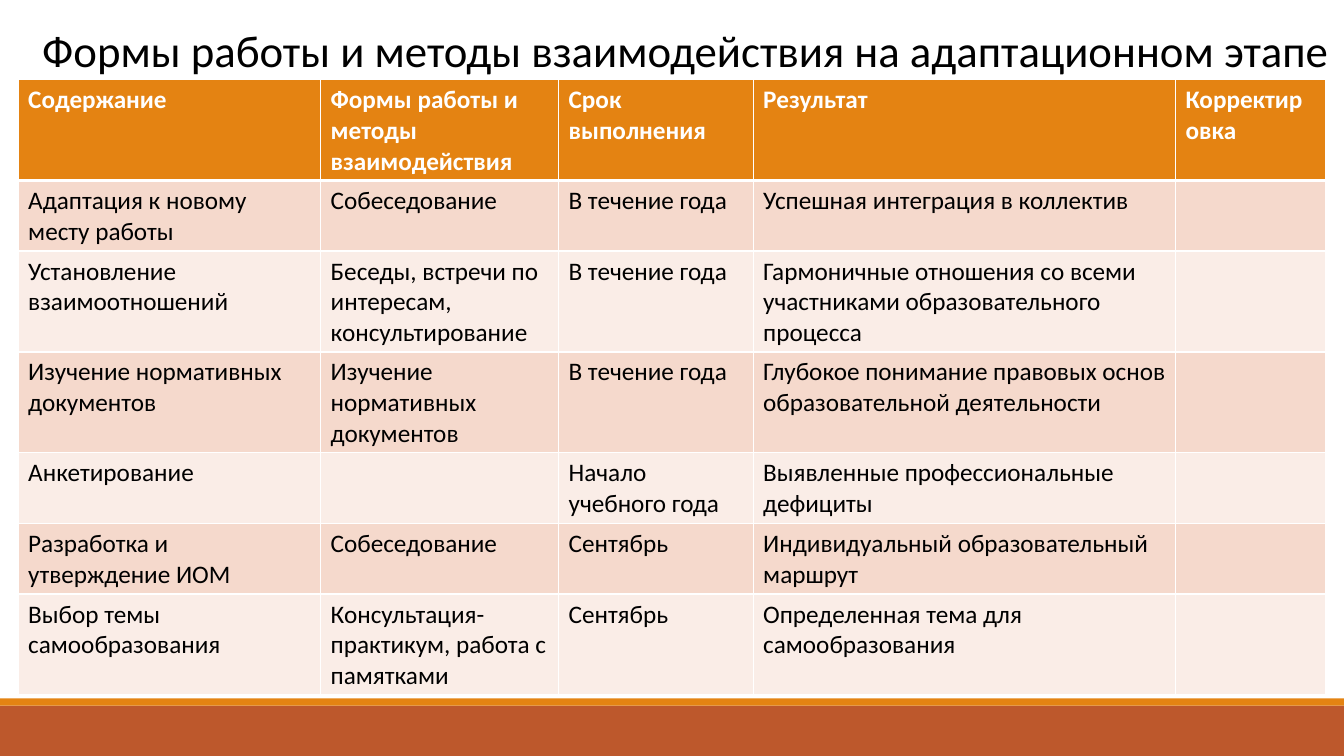
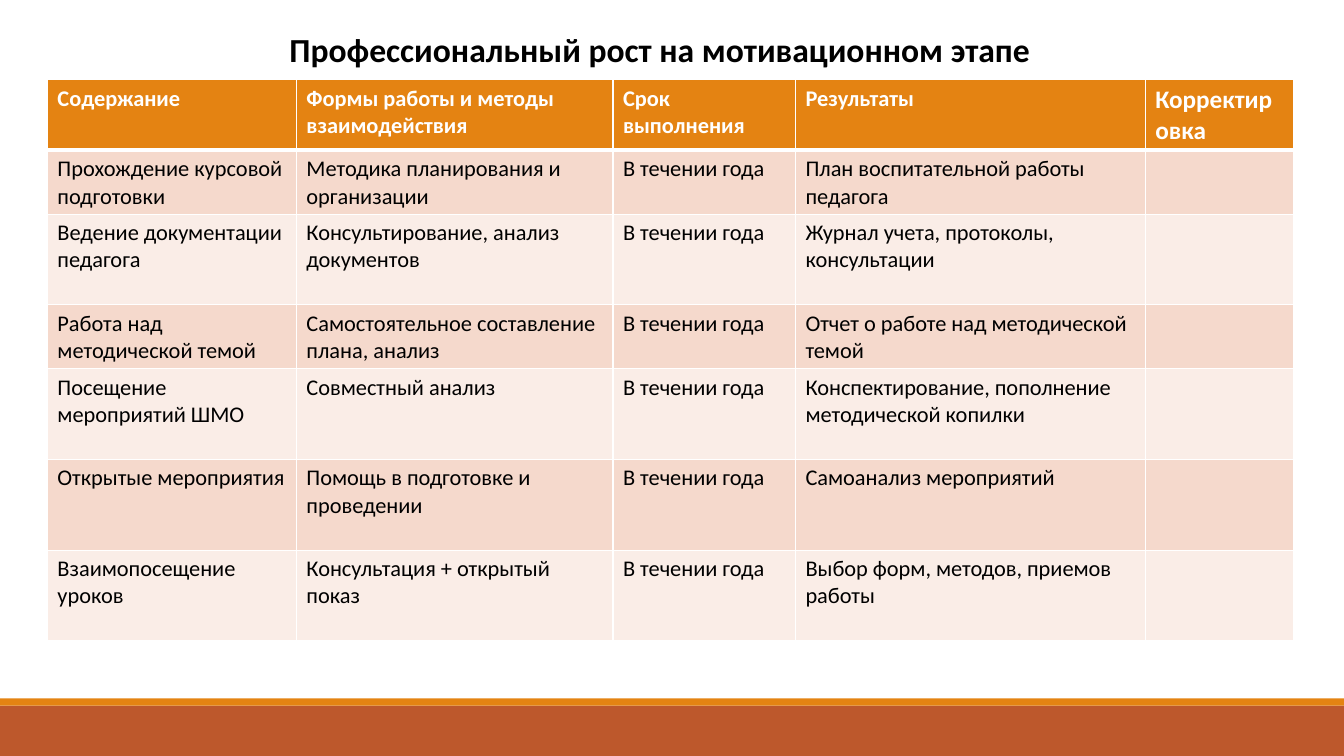
from pptx import Presentation
from pptx.dml.color import RGBColor
from pptx.enum.shapes import MSO_SHAPE as Shape
from pptx.enum.text import PP_ALIGN as Align
from pptx.oxml import parse_xml
from pptx.oxml.ns import nsdecls
from pptx.util import Inches, Pt

FONT = "Calibri"
WHITE = RGBColor(0xFF, 0xFF, 0xFF)
BLACK = RGBColor(0x00, 0x00, 0x00)
ORANGE = RGBColor(0xE4, 0x83, 0x12)
RUST = RGBColor(0xBD, 0x58, 0x2C)
ROW_FILLS = [RGBColor(0xF5, 0xD9, 0xCC), RGBColor(0xFA, 0xED, 0xE7)]
TABLE_TOP = 0.79
BANDS = [(7, 0.5, RUST), (6.93, 0.07, ORANGE)]  # top, height, fill

SLIDES = [
    {
        "title": "Формы работы и методы взаимодействия на адаптационном этапе",
        "title_box": (0.32, 0.18, 13.01, 0.64),
        "title_style": (32, False, Align.LEFT),
        "left": 0.18,
        "columns": [3, 2.36, 1.93, 4.19, 1.49],
        "heights": [1, 0.7, 1, 1, 0.7, 0.7, 1],
        "size": 18,
        "rows": [
            ("Содержание", "Формы работы и методы взаимодействия",
             "Срок выполнения", "Результат", "Корректировка"),
            ("Адаптация к новому месту работы", "Собеседование",
             "В течение года", "Успешная интеграция в коллектив", ""),
            ("Установление взаимоотношений",
             "Беседы, встречи по интересам, консультирование", "В течение года",
             "Гармоничные отношения со всеми участниками образовательного процесса", ""),
            ("Изучение нормативных документов", "Изучение нормативных документов",
             "В течение года",
             "Глубокое понимание правовых основ образовательной деятельности", ""),
            ("Анкетирование", "", "Начало учебного года",
             "Выявленные профессиональные дефициты", ""),
            ("Разработка и утверждение ИОМ", "Собеседование", "Сентябрь",
             "Индивидуальный образовательный маршрут", ""),
            ("Выбор темы самообразования",
             "Консультация-практикум, работа с памятками", "Сентябрь",
             "Определенная тема для самообразования", ""),
        ],
    },
    {
        "title": "Профессиональный рост на мотивационном этапе",
        "title_box": (2.18, 0.24, 8.73, 0.5),
        "title_style": (24, True, Align.CENTER),
        "left": 0.47,
        "columns": [2.47, 3.14, 1.81, 3.47, 1.47],
        "heights": [0.7, 0.63, 0.9, 0.63, 0.9, 0.9, 0.9],
        "size": 16,
        "rows": [
            ("Содержание", "Формы работы и методы взаимодействия",
             "Срок выполнения", "Результаты", "Корректировка"),
            ("Прохождение курсовой подготовки", "Методика планирования и организации",
             "В течении года", "План воспитательной работы педагога", ""),
            ("Ведение документации педагога", "Консультирование, анализ документов",
             "В течении года", "Журнал учета, протоколы, консультации", ""),
            ("Работа над методической темой", "Самостоятельное составление плана, анализ",
             "В течении года", "Отчет о работе над методической темой", ""),
            ("Посещение мероприятий ШМО", "Совместный анализ", "В течении года",
             "Конспектирование, пополнение методической копилки", ""),
            ("Открытые мероприятия", "Помощь в подготовке и проведении",
             "В течении года", "Самоанализ мероприятий", ""),
            ("Взаимопосещение уроков", "Консультация + открытый показ",
             "В течении года", "Выбор форм, методов, приемов работы", ""),
        ],
    },
]
CORRECTION_SIZE = 18  # heading of the last column, on both slides


def style_paragraph(para, size, bold, color):
    font = para.font
    font.name, font.size, font.bold = FONT, Pt(size), bold
    font.color.rgb = color


def move_bands_to_layout(slide, width):
    """Draw the footer bands once and hand them to the slide's layout."""
    layout = slide.slide_layout
    for placeholder in list(layout.placeholders):
        layout.shapes.element.remove(placeholder.element)
    bands = []
    for top, height, color in BANDS:
        band = slide.shapes.add_shape(
            Shape.RECTANGLE, 0, Inches(top), width, Inches(height))
        band.shadow.inherit = False
        band.fill.solid()
        band.fill.fore_color.rgb = color
        band.line.fill.background()
        bands.append(band)
    for band in bands:
        layout.shapes.element.append(band.element)


def add_title(slide, text, place, style):
    size, bold, align = style
    frame = slide.shapes.add_textbox(*map(Inches, place)).text_frame
    frame.word_wrap = True
    para = frame.paragraphs[0]
    para.text, para.alignment = text, align
    style_paragraph(para, size, bold, BLACK)


def set_borders(cell, widths):
    """Give the cell white edges; widths maps L, R, T and B to points."""
    properties = cell._tc.get_or_add_tcPr()
    for position, side in enumerate("LRTB"):
        properties.insert(position, parse_xml(
            f'<a:ln{side} {nsdecls("a")} w="{Pt(widths[side])}"><a:solidFill>'
            f'<a:srgbClr val="{WHITE}"/></a:solidFill></a:ln{side}>'))


def add_grid(slide, content):
    rows, columns, heights = content["rows"], content["columns"], content["heights"]
    table = slide.shapes.add_table(
        len(rows), len(columns), Inches(content["left"]), Inches(TABLE_TOP),
        Inches(sum(columns)), Inches(sum(heights))).table
    for column, width in zip(table.columns, columns):
        column.width = Inches(width)
    for row, height in zip(table.rows, heights):
        row.height = Inches(height)
    for row_index, texts in enumerate(rows):
        header = row_index == 0
        fill = ORANGE if header else ROW_FILLS[(row_index - 1) % 2]
        widths = {"L": 1, "R": 1, "T": 3 if row_index == 1 else 1,
                  "B": 3 if header else 1}
        for column_index, text in enumerate(texts):
            cell = table.cell(row_index, column_index)
            cell.fill.solid()
            cell.fill.fore_color.rgb = fill
            set_borders(cell, widths)
            para = cell.text_frame.paragraphs[0]
            para.text = text
            last_heading = header and column_index == len(columns) - 1
            style_paragraph(para, CORRECTION_SIZE if last_heading else content["size"],
                            header, WHITE if header else BLACK)


def main():
    deck = Presentation()
    deck.slide_width, deck.slide_height = Inches(13.33), Inches(7.5)
    blank = deck.slide_layouts[6]
    for index, content in enumerate(SLIDES):
        slide = deck.slides.add_slide(blank)
        if index == 0:
            move_bands_to_layout(slide, deck.slide_width)
        add_title(slide, content["title"], content["title_box"], content["title_style"])
        add_grid(slide, content)
    deck.save("out.pptx")


if __name__ == "__main__":
    main()
